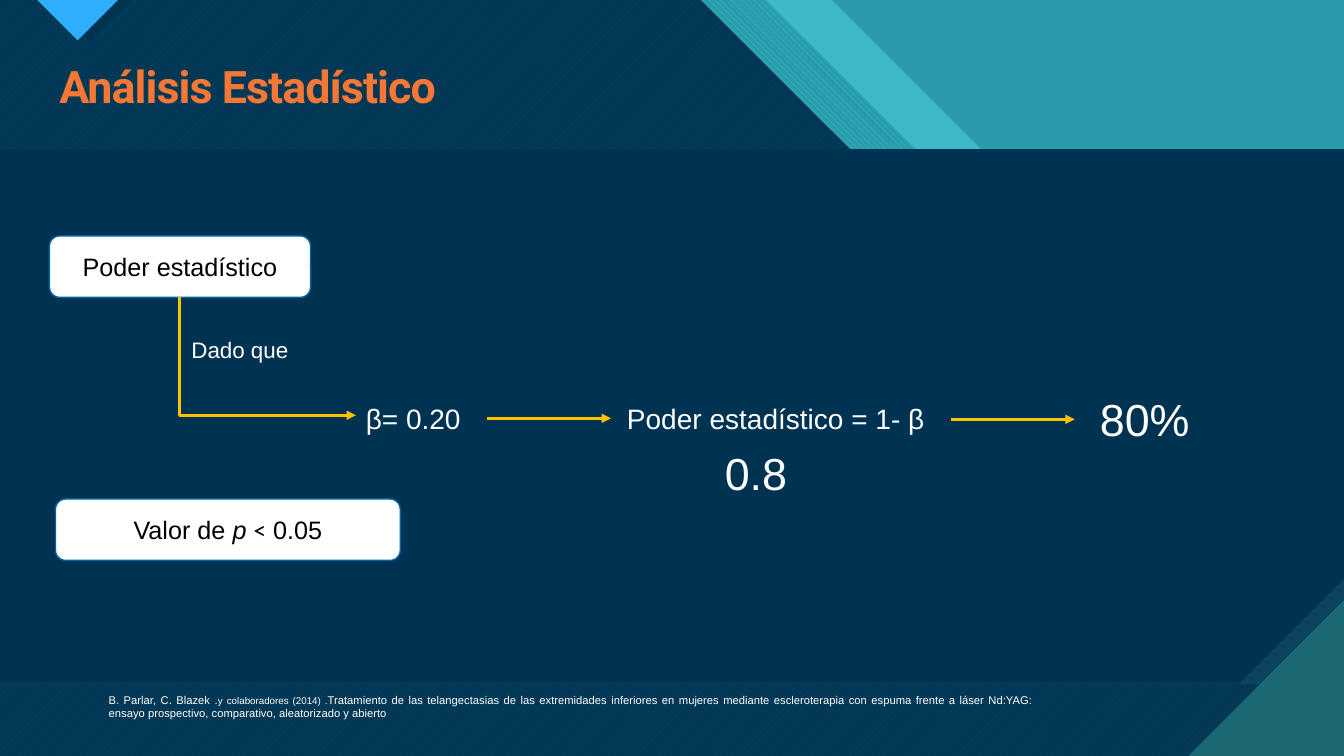
from pptx import Presentation
from pptx.dml.color import RGBColor
from pptx.enum import dml, shapes, text
from pptx.oxml.ns import qn
from pptx.util import Inches, Pt
from lxml import etree

COLORS = {
    "teal": "299CAB", "aqua": "47C3D3", "deep_teal": "1B6872",
    "navy": "003352", "slate": "0C4360", "sky": "2FAFFF",
    "orange": "F47735", "amber": "FFC000", "blue": "0065A4",
    "white": "FFFFFF", "black": "000000",
}
WIDTH, HEIGHT = 13.33, 7.5
BODY_TOP, BODY_HEIGHT = 1.48, 5.3


def rgb(name):
    return RGBColor.from_string(COLORS[name])


def paint(part, color, alpha=None, pattern=None, back=None):
    if pattern:
        part.fill.patterned()
        part.fill.pattern = pattern
        part.fill.fore_color.rgb = rgb(color)
        part.fill.back_color.rgb = rgb(back)
    else:
        part.fill.solid()
        part.fill.fore_color.rgb = rgb(color)
    if alpha:
        tint = part.fill._xPr.find(qn("a:solidFill"))[0]
        etree.SubElement(tint, qn("a:alpha")).set("val", str(alpha * 1000))
    part.line.fill.background()
    part.shadow.inherit = False


def add_polygon(slide, points, color, **style):
    corners = [(Inches(x), Inches(y)) for x, y in points]
    builder = slide.shapes.build_freeform(*corners[0])
    builder.add_line_segments(corners[1:], close=True)
    paint(builder.convert_to_shape(), color, **style)


def add_preset(slide, kind, box, color, **style):
    part = slide.shapes.add_shape(kind, *map(Inches, box))
    paint(part, color, **style)
    return part


def style_run(paragraph, wording, size=None, font=None, italic=None):
    run = paragraph.add_run()
    run.text = wording
    if size:
        run.font.size = Pt(size)
    if font:
        run.font.name = font
    if italic:
        run.font.italic = True


def style_paragraph(paragraph, size, color, font="Arial", align=None):
    paragraph.font.size = Pt(size)
    paragraph.font.name = font
    paragraph.font.color.rgb = rgb(color)
    paragraph.alignment = align


def add_label(slide, box, runs, size, color="white", font="Arial", align=None):
    label = slide.shapes.add_textbox(*map(Inches, box))
    label.text_frame.word_wrap = True
    paragraph = label.text_frame.paragraphs[0]
    style_paragraph(paragraph, size, color, font, align)
    for run in runs:
        style_run(paragraph, *run)
    return paragraph


def add_card(slide, box, runs):
    card = add_preset(slide, shapes.MSO_SHAPE.ROUNDED_RECTANGLE, box, "white")
    card.line.color.rgb = rgb("blue")
    card.line.width = Pt(1)
    card.text_frame.word_wrap = True
    card.text_frame.vertical_anchor = text.MSO_ANCHOR.MIDDLE
    paragraph = card.text_frame.paragraphs[0]
    style_paragraph(paragraph, 18, "black", align=text.PP_ALIGN.CENTER)
    for run in runs:
        style_run(paragraph, *run)


def add_arrow(slide, start, end, kind=shapes.MSO_CONNECTOR.STRAIGHT):
    arrow = slide.shapes.add_connector(kind, *map(Inches, start + end))
    arrow.line.color.rgb = rgb("amber")
    arrow.line.width = Pt(2.25)
    properties = arrow._element.spPr
    line = properties.find(qn("a:ln"))
    etree.SubElement(line, qn("a:tailEnd")).set("type", "triangle")
    etree.SubElement(properties, qn("a:effectLst"))
    return arrow


def add_corner_arrow(slide, start, end):
    across, down = end[0] - start[0], end[1] - start[1]
    left = start[0] + (across - down) / 2
    top = start[1] + (down - across) / 2
    arrow = add_arrow(slide, (left, top), (left + down, top + across),
                      shapes.MSO_CONNECTOR.ELBOW)
    properties = arrow._element.spPr
    properties.find(qn("a:prstGeom")).set("prst", "bentConnector2")
    frame = properties.find(qn("a:xfrm"))
    frame.set("rot", str(270 * 60000))
    frame.set("flipH", "1")


def diagonal_band(left, notch_width):
    notch = left + 2.97 + notch_width
    return [(0, 0), (left, 0), (left + 2.97, 2.97), (notch, 2.97),
            (WIDTH, 2.97 + WIDTH - notch), (WIDTH, HEIGHT), (0, HEIGHT)]


def draw_backdrop(slide):
    patterns = dml.MSO_PATTERN
    add_preset(slide, shapes.MSO_SHAPE.RECTANGLE, (0, 0, WIDTH, HEIGHT), "teal")
    add_polygon(slide, diagonal_band(8.25, 1.12), "aqua", alpha=74)
    add_polygon(slide, diagonal_band(7.6, 1.26), "aqua",
                pattern=patterns.WIDE_DOWNWARD_DIAGONAL, back="teal")
    navy_band = diagonal_band(6.95, 1.26)
    add_polygon(slide, navy_band, "aqua",
                pattern=patterns.WIDE_UPWARD_DIAGONAL, back="deep_teal")
    add_polygon(slide, navy_band, "navy", alpha=90)
    add_polygon(slide, [(0.48, 0), (1.31, 0), (0.9, 0.41)], "navy")
    add_polygon(slide, [(0.37, 0), (1.17, 0), (0.77, 0.4)], "sky",
                pattern=patterns.DARK_HORIZONTAL, back="deep_teal")
    body = (0, BODY_TOP, WIDTH, BODY_HEIGHT)
    add_preset(slide, shapes.MSO_SHAPE.RECTANGLE, body, "slate",
               pattern=patterns.DARK_VERTICAL, back="deep_teal")
    bottom, snip = BODY_TOP + BODY_HEIGHT, 1.04
    add_polygon(slide, [(0, BODY_TOP), (WIDTH, BODY_TOP), (WIDTH, bottom - snip),
                        (WIDTH - snip, bottom), (0, bottom)], "navy")
    add_polygon(slide, [(11.79, HEIGHT), (WIDTH, HEIGHT), (WIDTH, 5.96)], "deep_teal",
                pattern=patterns.DARK_HORIZONTAL, back="aqua")


def draw_title(slide):
    title = add_label(slide, (0.49, 0.59, 12.26, 0.59),
                      [("Análisis Estadístico",)], 32, "orange", "Roboto")
    title.font.bold = True
    title.line_spacing = 0.9
    title.runs[0].font._element.set("spc", "-70")


def draw_power_flow(slide):
    add_card(slide, (0.49, 2.34, 2.59, 0.61), [("Poder estadístico",)])
    for box, wording, size in [
        ((7.09, 4.37, 0.98, 0.64), "0.8", 32),
        ((3.53, 3.93, 1.3, 0.44), "β= 0.20", 20),
        ((6.12, 3.93, 3.3, 0.44), "Poder estadístico = 1- β", 20),
        ((10.81, 3.84, 1.42, 0.64), "80%", 32),
        ((1.8, 3.29, 2.02, 0.37), "Dado que", 16),
    ]:
        add_label(slide, box, [(wording,)], size)
    add_arrow(slide, (4.83, 4.15), (6.06, 4.15))
    add_arrow(slide, (9.43, 4.16), (10.66, 4.16))
    add_corner_arrow(slide, (1.78, 2.95), (3.53, 4.12))
    add_card(slide, (0.55, 4.95, 3.42, 0.61),
             [("Valor de",), (" p ", None, None, True),
              ("<", None, "Calibri"), (" 0.05",)])


def draw_citation(slide):
    study = ("Tratamiento de las telangectasias de las extremidades inferiores en "
             "mujeres mediante escleroterapia con espuma frente a láser Nd:YAG: "
             "ensayo prospectivo, comparativo, aleatorizado y abierto")
    add_label(slide, (0.98, 6.83, 9.37, 0.37),
              [("B. Parlar, C. Blazek .",), ("y colaboradores (2014) .", 7), (study,)],
              8, align=text.PP_ALIGN.JUSTIFY)


def main():
    deck = Presentation()
    deck.slide_width, deck.slide_height = Inches(WIDTH), Inches(HEIGHT)
    slide = deck.slides.add_slide(deck.slide_layouts[6])
    slide.background.fill.solid()
    slide.background.fill.fore_color.rgb = rgb("aqua")
    draw_backdrop(slide)
    draw_title(slide)
    draw_power_flow(slide)
    draw_citation(slide)
    deck.save("out.pptx")


if __name__ == "__main__":
    main()
